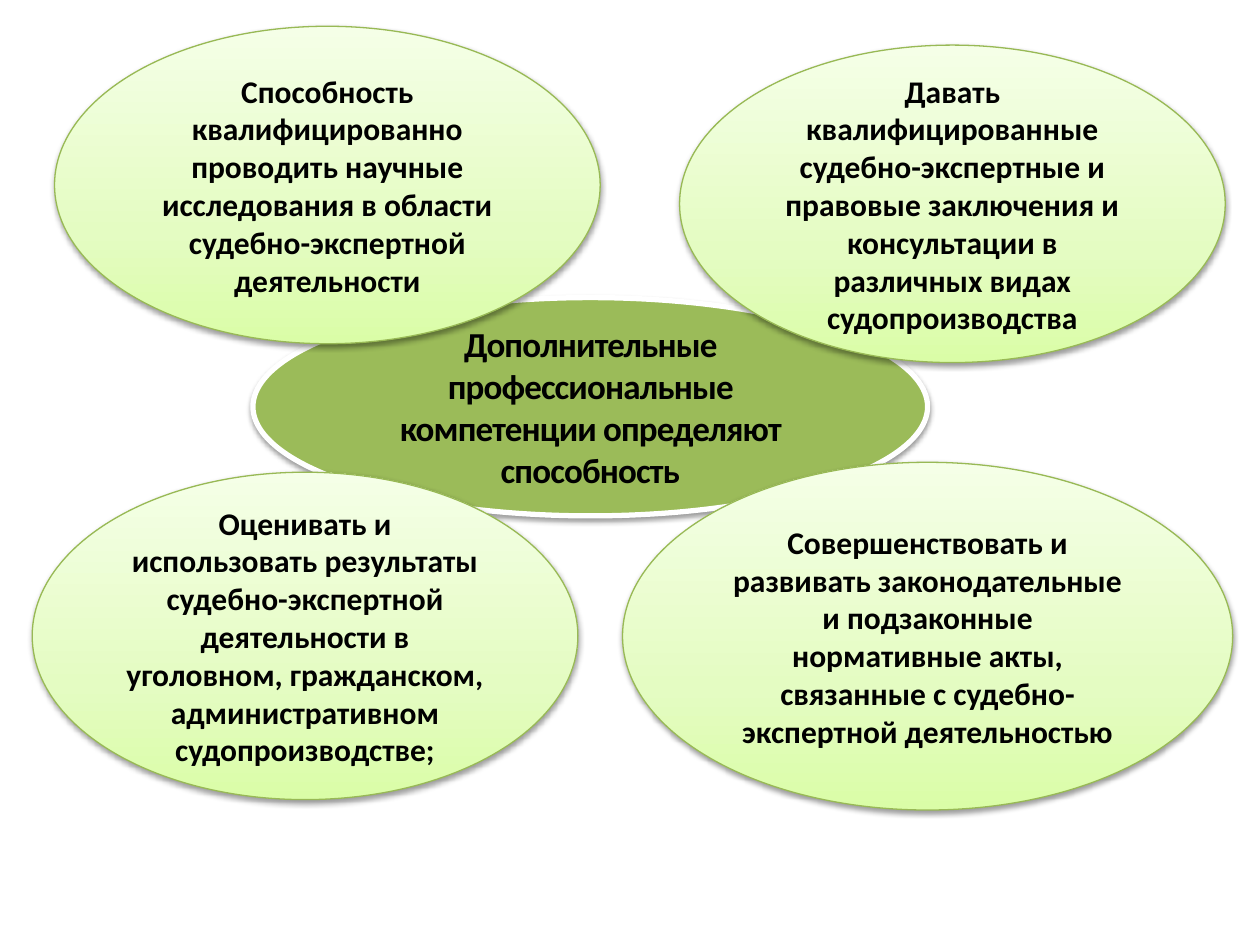
"""Build a slide of a central oval ringed by four competence ovals."""
from copy import deepcopy

from lxml import etree
from pptx import Presentation
from pptx import util as u
from pptx.dml import color
from pptx.enum import shapes, text
from pptx.oxml import ns


def rgb(code):
    return color.RGBColor.from_string(code)


def oval(left, top, width, height, words, size):
    shape = slide.shapes.add_shape(
        shapes.MSO_SHAPE.OVAL, u.Cm(left), u.Cm(top), u.Cm(width), u.Cm(height))
    shape.shadow.inherit = False
    glow = shape._element.spPr.find(ns.qn("a:effectLst"))
    drop = etree.SubElement(glow, ns.qn("a:outerShdw"), blurRad="40000",
                            dist="20000", dir="5400000", rotWithShape="0")
    tint = etree.SubElement(drop, ns.qn("a:srgbClr"), val="000000")
    etree.SubElement(tint, ns.qn("a:alpha"), val="38000")
    frame = shape.text_frame
    frame.word_wrap = True
    frame.vertical_anchor = text.MSO_ANCHOR.MIDDLE
    para = frame.paragraphs[0]
    para.text = words
    para.alignment = text.PP_ALIGN.CENTER
    para.font.name = "Calibri"
    para.font.size = u.Pt(size)
    para.font.bold = True
    para.font.color.rgb = rgb("000000")
    return shape


deck = Presentation()
deck.slide_width, deck.slide_height = u.Cm(25.4), u.Cm(19.05)
slide = deck.slides.add_slide(deck.slide_layouts[6])

hub = oval(5.1, 6, 13.6, 4.4,
           "Дополнительные профессиональные компетенции определяют способность", 20)
hub.fill.solid()
hub.fill.fore_color.rgb = rgb("9BBB59")
hub.line.color.rgb = rgb("FFFFFF")
hub.line.width = u.Pt(3)
hub.text_frame.paragraphs[0].font._element.set("spc", "-50")

skills = [
    (12.55, 9.32, 12.3, 7.01, "Совершенствовать и развивать законодательные и подзаконные "
     "нормативные акты, связанные с судебно-экспертной деятельностью"),
    (13.7, 0.91, 11, 6.4, "Давать квалифицированные судебно-экспертные и правовые "
     "заключения и консультации в различных видах судопроизводства"),
    (0.65, 9.52, 11, 6.6, "Оценивать и использовать результаты судебно-экспертной "
     "деятельности в уголовном, гражданском, административном судопроизводстве;"),
    (1.1, 0.53, 11, 6.4, "Способность квалифицированно проводить научные исследования "
     "в области судебно-экспертной деятельности"),
]
shades = [(0, "DAFDA7"), (0.35, "E4FCC2"), (1, "F5FFE7")]

for *box, words in skills:
    skill = oval(*box, words, 18)
    skill.fill.gradient()
    skill.fill.gradient_angle = 90
    stops = skill._element.spPr.find(".//" + ns.qn("a:gsLst"))
    stops.append(deepcopy(stops[-1]))
    for stop, (place, code) in zip(skill.fill.gradient_stops, shades):
        stop.position = place
        stop.color.rgb = rgb(code)
    skill.line.color.rgb = rgb("98B955")
    skill.line.width = u.Pt(0.75)

deck.save("out.pptx")
